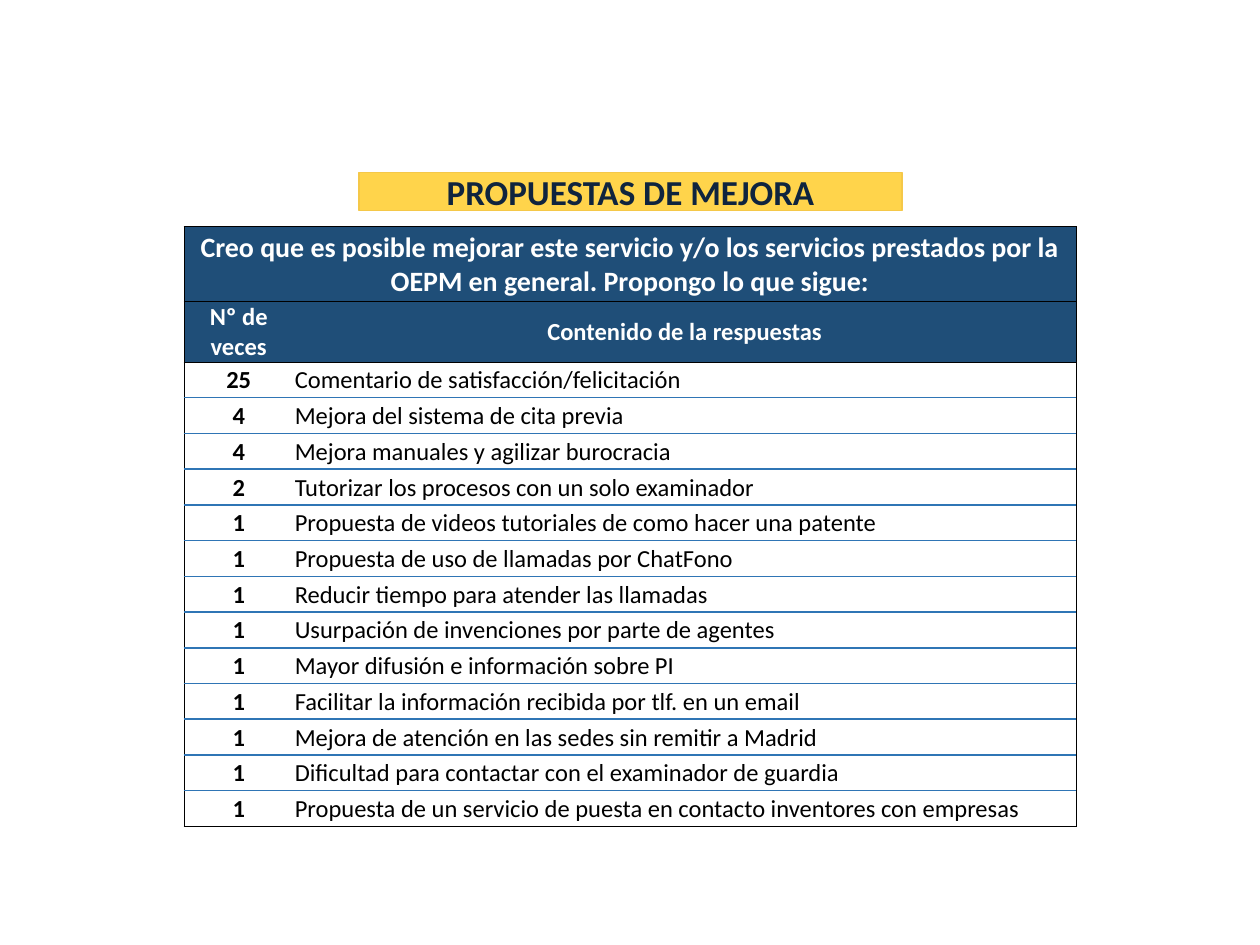
import pptx
import pptx.dml.color
import pptx.enum.text
import pptx.oxml.ns
import pptx.util
from lxml import etree

Inches = pptx.util.Inches
Pt = pptx.util.Pt
ALIGN = pptx.enum.text.PP_ALIGN
MIDDLE = pptx.enum.text.MSO_ANCHOR.MIDDLE

COLORS = {
    "navy": "1F4E78",
    "blue": "2F75B5",
    "white": "FFFFFF",
    "black": "000000",
    "yellow": "FFD44B",
    "gold": "F5C849",
    "ink": "0F243E",
}

QUESTION = ("Creo que es posible mejorar este servicio y/o los servicios "
            "prestados por la OEPM en general. Propongo lo que sigue:")
HEADINGS = ("Nº de veces", "Contenido de la respuestas")
ANSWERS = [
    (25, "Comentario de satisfacción/felicitación"),
    (4, "Mejora del sistema de cita previa"),
    (4, "Mejora manuales y agilizar burocracia"),
    (2, "Tutorizar los procesos con un solo examinador"),
    (1, "Propuesta de videos tutoriales de como hacer una patente"),
    (1, "Propuesta de uso de llamadas por ChatFono"),
    (1, "Reducir tiempo para atender las llamadas"),
    (1, "Usurpación de invenciones por parte de agentes"),
    (1, "Mayor difusión e información sobre PI"),
    (1, "Facilitar la información recibida por tlf. en un email"),
    (1, "Mejora de atención en las sedes sin remitir a Madrid"),
    (1, "Dificultad para contactar con el examinador de guardia"),
    (1, "Propuesta de un servicio de puesta en contacto inventores con empresas"),
]


def rgb(name):
    return pptx.dml.color.RGBColor.from_string(COLORS[name])


class SlideBuilder:
    font = "Calibri"
    outer = ("black", 0.5)
    inner = ("blue", 1)

    def __init__(self, page):
        self.page = page

    def add_text(self, frame, text, size, color, bold=True, align=ALIGN.CENTER):
        para = frame.paragraphs[0]
        para.alignment = align
        span = para.add_run()
        span.text = text
        span.font.name = self.font
        span.font.size = Pt(size)
        span.font.bold = bold
        span.font.color.rgb = rgb(color)

    def title(self, text, left, top, width, height):
        box = self.page.shapes.title
        box.left, box.top = Inches(left), Inches(top)
        box.width, box.height = Inches(width), Inches(height)
        box.fill.solid()
        box.fill.fore_color.rgb = rgb("yellow")
        box.line.color.rgb = rgb("gold")
        box.line.width = Pt(1)
        frame = box.text_frame
        frame.auto_size = pptx.enum.text.MSO_AUTO_SIZE.NONE
        frame.word_wrap = True
        frame.vertical_anchor = MIDDLE
        frame.margin_left = frame.margin_right = Inches(0.07)
        frame.margin_top = frame.margin_bottom = Inches(0.04)
        self.add_text(frame, text, 20, "ink")

    def border(self, cell, side, style):
        tag = pptx.oxml.ns.qn
        line = etree.SubElement(cell._tc.get_or_add_tcPr(), tag("a:ln" + side))
        if style is None:
            etree.SubElement(line, tag("a:noFill"))
            return
        color, width = style
        line.set("w", str(Pt(width)))
        fill = etree.SubElement(line, tag("a:solidFill"))
        etree.SubElement(fill, tag("a:srgbClr"), val=COLORS[color])

    def cell(self, cell, fill, borders):
        for side, style in zip("LRTB", borders):
            self.border(cell, side, style)
        cell.fill.solid()
        cell.fill.fore_color.rgb = rgb(fill)
        cell.vertical_anchor = MIDDLE
        cell.margin_left = cell.margin_right = cell.margin_top = Inches(0.01)
        cell.margin_bottom = 0

    def table(self, left, top, columns, heights):
        rows = len(heights)
        table = self.page.shapes.add_table(
            rows, len(columns), Inches(left), Inches(top),
            Inches(sum(columns)), Inches(sum(heights))).table
        for column, width in zip(table.columns, columns):
            column.width = Inches(width)
        for row, height in zip(table.rows, heights):
            row.height = Inches(height)

        # Black frame and header lines, blue lines between answers
        for number in range(rows):
            above = self.outer if number <= 2 else self.inner
            below = self.outer if number < 2 or number == rows - 1 else self.inner
            fill = "navy" if number < 2 else "white"
            middle = self.outer if number == 0 else None
            self.cell(table.cell(number, 0), fill, (self.outer, middle, above, below))
            self.cell(table.cell(number, 1), fill, (middle, self.outer, above, below))

        # Question across both columns, then headings
        table.cell(0, 0).merge(table.cell(0, 1))
        self.add_text(table.cell(0, 0).text_frame, QUESTION, 16, "white")
        for column, heading in enumerate(HEADINGS):
            self.add_text(table.cell(1, column).text_frame, heading, 14, "white")

        # Answers
        for number, (count, answer) in enumerate(ANSWERS, start=2):
            self.add_text(table.cell(number, 0).text_frame, str(count), 14, "black")
            self.add_text(table.cell(number, 1).text_frame, answer, 14, "black",
                          bold=False, align=ALIGN.LEFT)


def main():
    deck = pptx.Presentation()
    deck.slide_width, deck.slide_height = Inches(10), Inches(7.5)
    builder = SlideBuilder(deck.slides.add_slide(deck.slide_layouts[5]))

    builder.title("PROPUESTAS DE MEJORA", 2.85, 1.37, 4.31, 0.3)

    # Answer rows share the height left under the two header rows
    headers = [0.59, 0.48]
    answer_height = (4.76 - sum(headers)) / len(ANSWERS)
    builder.table(1.46, 1.8, [0.87, 6.21],
                  headers + [answer_height] * len(ANSWERS))

    deck.save("out.pptx")


if __name__ == "__main__":
    main()
